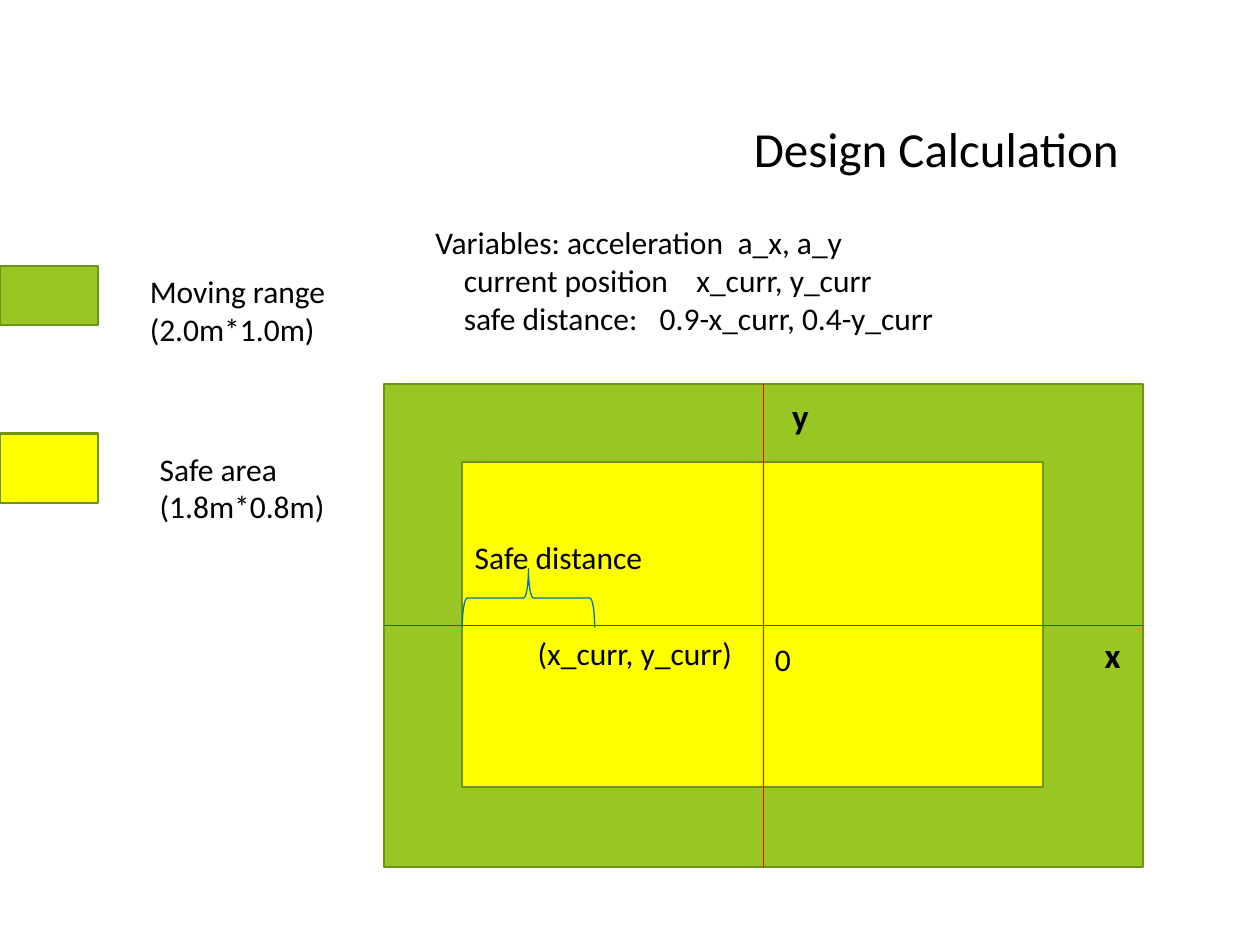
from lxml import etree
from pptx import Presentation
from pptx.dml.color import RGBColor
from pptx.enum.shapes import MSO_CONNECTOR as CONN, MSO_SHAPE as SHAPE
from pptx.enum.text import MSO_ANCHOR as ANCHOR, PP_ALIGN as ALIGN
from pptx.oxml.ns import qn
from pptx.util import Cm, Pt

COLORS = {"text": "000000", "range": "98C723", "safe": "FFFF00",
          "border": "6F9219", "axis": "FF0000", "brace": "0070C0"}
FONT = "Calibri"

# Boxes are left, top, width, height in cm
FIELD = (7.75, 7.75, 15.29, 9.73)
RECTANGLES = [
    (FIELD, "range"),
    ((0, 5.36, 1.98, 1.19), "range"),
    ((0, 8.74, 1.98, 1.4), "safe"),
    ((9.32, 9.32, 11.71, 6.55), "safe"),
]
BRACE = (10.06, 10.72, 1.19, 2.67)

TITLE = ("Design Calculation", (1.57, -0.79, 21.23, 7.54))
LEGEND = [
    (["Moving range", "(2.0m*1.0m)"], (2.77, 5.36, 4.19, 1.8)),
    (["Safe area", "(1.8m*0.8m)"], (2.97, 8.94, 3.86, 1.8)),
]
VARIABLES_BOX = (8.53, 4.37, 10.77, 3.23)
VARIABLES = [  # text, tab stops in cm
    ("Variables: acceleration\ta_x, a_y", [6.09]),
    ("\tcurrent position\tx_curr, y_curr", [0.57, 5.26]),
    ("\tsafe distance:\t0.9-x_curr, 0.4-y_curr", [0.57, 4.52]),
]
LABELS = [  # text, box, size, bold
    ("0", (15.37, 12.78, 0.91, 0.86), 18, False),
    ("y", (15.72, 7.82, 1.07, 1.12), 20, True),
    ("x", (22.02, 12.65, 0.99, 1.12), 20, True),
    ("(x_curr, y_curr)", (10.59, 12.65, 4.6, 0.86), 18, False),
    ("Safe distance", (9.32, 10.72, 4.6, 0.86), 18, False),
]


def rgb(name):
    return RGBColor.from_string(COLORS[name])


def cm(values):
    return [Cm(v) for v in values]


def set_line(s, color, width):
    s.line.color.rgb = rgb(color)
    s.line.width = Pt(width)


def add_shape(slide, kind, box, line, width, fill=None):
    s = slide.shapes.add_shape(kind, *cm(box))
    s.shadow.inherit = False
    if fill:
        s.fill.solid()
        s.fill.fore_color.rgb = rgb(fill)
    else:
        s.fill.background()
    set_line(s, line, width)
    return s


def add_axis(slide, start, end):
    s = slide.shapes.add_connector(CONN.STRAIGHT, *cm(start + end))
    set_line(s, "axis", 0.75)
    etree.SubElement(s._element.spPr, qn("a:effectLst"))


def add_tabs(p, stops):
    tabs = etree.SubElement(p._p.get_or_add_pPr(), qn("a:tabLst"))
    for stop in stops:
        etree.SubElement(tabs, qn("a:tab"), pos=str(Cm(stop)), algn="l")


def add_text(slide, lines, box, size=18, bold=False, align=ALIGN.LEFT,
             anchor=ANCHOR.TOP, tabs=None):
    tf = slide.shapes.add_textbox(*cm(box)).text_frame
    tf.word_wrap = True
    tf.vertical_anchor = anchor
    for i, line in enumerate(lines):
        p = tf.add_paragraph() if i else tf.paragraphs[0]
        p.alignment = align
        if tabs:
            add_tabs(p, tabs[i])
        r = p.add_run()
        r.text = line
        r.font.name, r.font.size, r.font.bold = FONT, Pt(size), bold
        r.font.color.rgb = rgb("text")


def main():
    prs = Presentation()
    prs.slide_width, prs.slide_height = Cm(25.4), Cm(19.05)
    slide = prs.slides.add_slide(prs.slide_layouts[6])

    title, box = TITLE
    add_text(slide, [title], box, 28, align=ALIGN.RIGHT, anchor=ANCHOR.MIDDLE)
    for box, fill in RECTANGLES:
        add_shape(slide, SHAPE.RECTANGLE, box, "border", 1.25, fill)
    for lines, box in LEGEND:
        add_text(slide, lines, box)
    lines, stops = zip(*VARIABLES)
    add_text(slide, lines, VARIABLES_BOX, tabs=stops)

    # The axes cross at the centre of the moving range
    left, top, width, height = FIELD
    mid_x, mid_y = left + width / 2, top + height / 2
    add_axis(slide, (left, mid_y), (left + width, mid_y))
    add_axis(slide, (mid_x, top + height), (mid_x, top))

    brace = add_shape(slide, SHAPE.RIGHT_BRACE, BRACE, "brace", 0.75)
    brace.rotation = 270
    for text, box, size, bold in LABELS:
        add_text(slide, [text], box, size, bold)

    prs.save("out.pptx")


if __name__ == "__main__":
    main()
